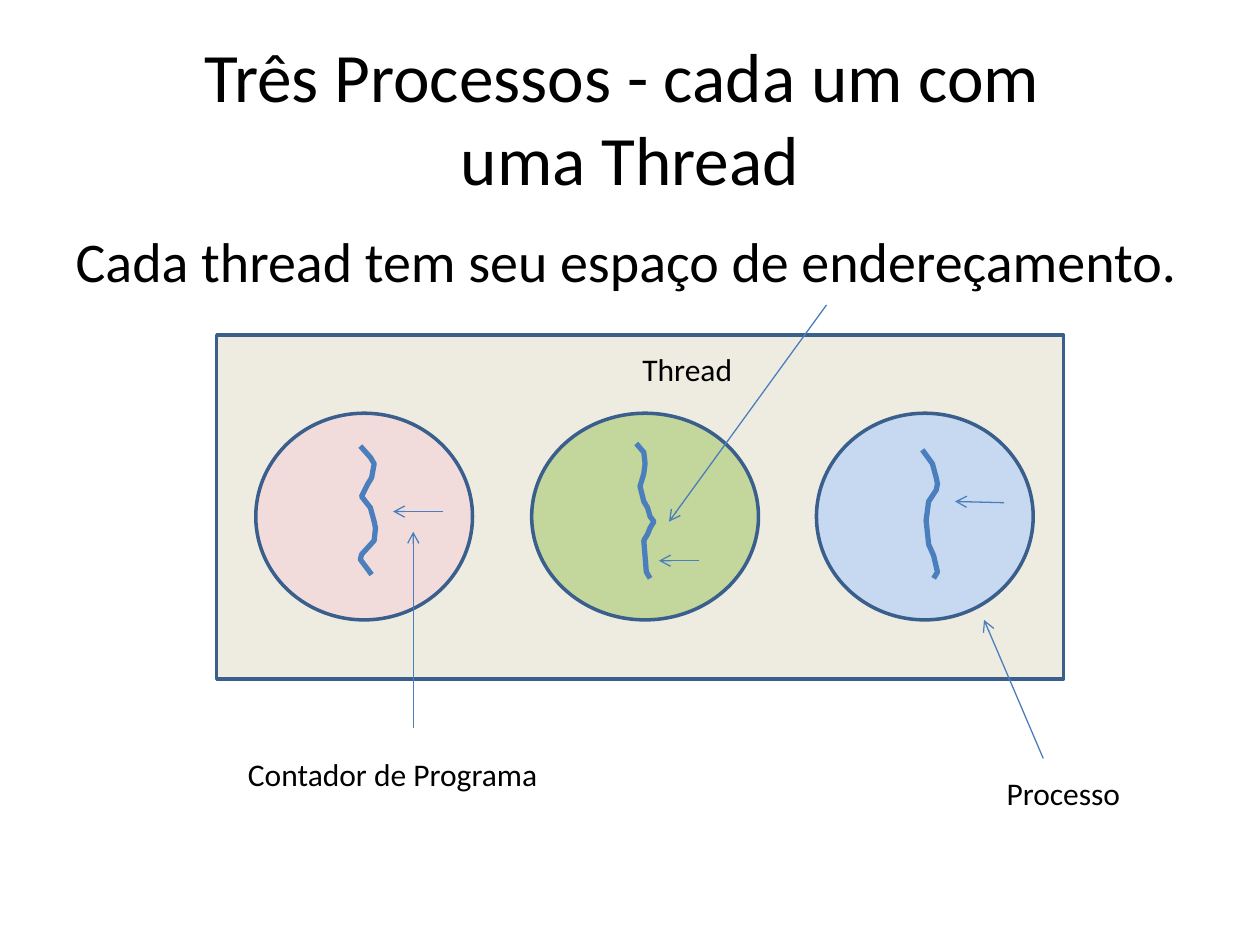
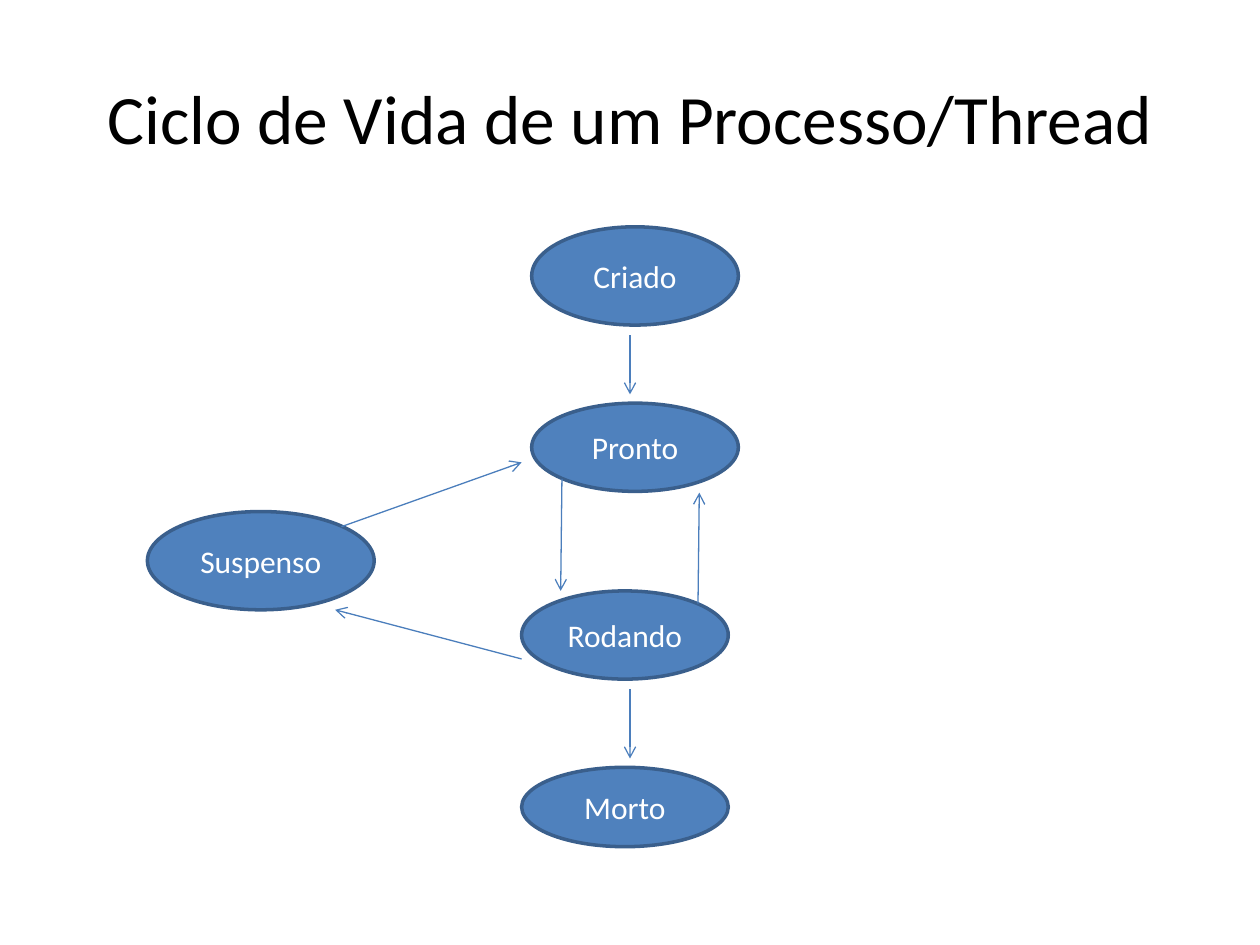
from dataclasses import dataclass

from lxml.etree import SubElement
from pptx import Presentation
from pptx.dml.color import RGBColor
from pptx.enum.shapes import MSO_CONNECTOR, MSO_SHAPE
from pptx.enum.text import MSO_ANCHOR, MSO_AUTO_SIZE, PP_ALIGN
from pptx.oxml.ns import qn
from pptx.util import Inches, Pt


@dataclass(frozen=True)
class Theme:
    font: str = "Calibri"
    ink: str = "000000"
    white: str = "FFFFFF"
    edge: str = "3A5F8C"
    wire: str = "4B7EBC"
    panel: str = "EEECE1"
    rose: str = "F2DCDB"
    green: str = "C3D69B"
    sky: str = "C6D9F1"
    state: str = "4F81BD"
    title: float = 39.6
    body: float = 32
    label: float = 18
    border: float = 2
    strand: float = 3
    arrow: float = 0.75


THEME = Theme()

PROCS = [
    (2.50, 1.80, THEME.green, (1.33, 1.17, 1.01, 1.17), [
        (0.83, 0.24), (0.89, 0.31), (0.90, 0.40), (0.89, 0.48), (0.86, 0.58),
        (0.89, 0.70), (0.92, 0.75), (0.94, 0.82), (0.97, 0.86), (0.94, 0.91),
        (0.92, 0.96), (0.89, 1.01), (0.91, 1.26), (0.94, 1.31),
    ]),
    (0.31, 1.72, THEME.rose, (1.49, 0.78, 1.09, 0.78), [
        (0.83, 0.26), (0.91, 0.35), (0.94, 0.40), (0.92, 0.51), (0.89, 0.56),
        (0.84, 0.66), (0.91, 0.75), (0.94, 0.86), (0.95, 0.91), (0.94, 1.01),
        (0.84, 1.12), (0.83, 1.16), (0.89, 1.24), (0.92, 1.28),
    ]),
    (4.76, 1.72, THEME.sky, (1.49, 0.71, 1.10, 0.70), [
        (0.84, 0.29), (0.92, 0.40), (0.95, 0.51), (0.96, 0.56), (0.95, 0.61),
        (0.89, 0.70), (0.87, 0.85), (0.89, 1.04), (0.93, 1.13), (0.96, 1.26),
        (0.93, 1.31),
    ]),
]

NOTES = [
    ("Contador de Programa", (0.15, 3.28, 2.73, 0.4), (1.56, 3.12, 1.56, 1.56)),
    ("Thread", (3.28, 0.07, 0.94, 0.4), (4.84, -0.24, 3.59, 1.48)),
    ("Processo", (6.17, 3.43, 1.25, 0.4), (6.56, 3.36, 6.09, 2.26)),
]

STATES = [
    ("Criado", (3.05, 0, 1.64, 0.78)),
    ("Pronto", (3.05, 1.4, 1.64, 0.7)),
    ("Rodando", (2.97, 2.89, 1.64, 0.7)),
    ("Morto", (2.97, 4.29, 1.64, 0.63)),
    ("Suspenso", (0, 2.26, 1.8, 0.78)),
]

MOVES = [
    (3.29, 2.0, 3.28, 2.89),
    (4.37, 2.99, 4.38, 2.11),
    (3.83, 0.86, 3.83, 1.33),
    (3.83, 3.67, 3.83, 4.22),
    (1.54, 2.38, 2.97, 1.87),
    (2.97, 3.43, 1.49, 3.04),
]


def apply(item, values):
    for name, value in values.items():
        setattr(item, name, value)


def rgb(code):
    return RGBColor.from_string(code)


def place(box, spot):
    left, top = box[:2]
    return [Inches(n) for n in (left + spot[0], top + spot[1], *spot[2:])]


def write(frame, text, size, color, align, **form):
    apply(frame, {"text": text, "word_wrap": True, **form})
    for para in frame.paragraphs:
        para.alignment = align
        for run in para.runs:
            apply(run.font, {"name": THEME.font, "size": Pt(size)})
            run.font.color.rgb = rgb(color)


def stroke(item, color, width):
    item.line.color.rgb = rgb(color)
    item.line.width = Pt(width)


def shape(slide, kind, box, spot, fill):
    item = slide.shapes.add_shape(kind, *place(box, spot))
    item.shadow.inherit = False
    item.fill.solid()
    item.fill.fore_color.rgb = rgb(fill)
    stroke(item, THEME.edge, THEME.border)
    return item


def arrow(slide, box, ends):
    ends = place(box, ends[:2]) + place(box, ends[2:])
    item = slide.shapes.add_connector(MSO_CONNECTOR.STRAIGHT, *ends)
    stroke(item, THEME.wire, THEME.arrow)
    props = item.element.spPr
    SubElement(props.find(qn("a:ln")), qn("a:tailEnd"), type="arrow")
    SubElement(props, qn("a:effectLst"))


def strand(slide, box, dots):
    start, *rest = [place(box, dot) for dot in dots]
    pen = slide.shapes.build_freeform(*start)
    pen.add_line_segments(rest, close=False)
    item = pen.convert_to_shape()
    item.shadow.inherit = False
    item.fill.background()
    stroke(item, THEME.wire, THEME.strand)


def head(slide, text):
    write(slide.shapes.title.text_frame, text, THEME.title, THEME.ink, PP_ALIGN.CENTER,
          vertical_anchor=MSO_ANCHOR.MIDDLE, auto_size=MSO_AUTO_SIZE.NONE)


def lead(slide, text):
    frame = slide.placeholders[1].text_frame
    write(frame, text, THEME.body, THEME.ink, PP_ALIGN.LEFT, auto_size=MSO_AUTO_SIZE.NONE)
    for para in frame.paragraphs:
        SubElement(para._p.get_or_add_pPr(), qn("a:buNone"))


def process(slide, box, fill, ends, dots):
    shape(slide, MSO_SHAPE.OVAL, box, (0, 0, *box[2:]), fill)
    strand(slide, box, dots)
    arrow(slide, box, ends)


def memory(slide, box):
    shape(slide, MSO_SHAPE.RECTANGLE, box, (0, 0, *box[2:]), THEME.panel)
    for left, width, *parts in PROCS:
        process(slide, (box[0] + left, box[1] + 0.62, width, 1.64), *parts)
    for text, spot, ends in NOTES:
        label = slide.shapes.add_textbox(*place(box, spot))
        write(label.text_frame, text, THEME.label, THEME.ink, PP_ALIGN.LEFT,
              auto_size=MSO_AUTO_SIZE.SHAPE_TO_FIT_TEXT)
        arrow(slide, box, ends)


def cycle(slide, box):
    for text, spot in STATES:
        item = shape(slide, MSO_SHAPE.OVAL, box, spot, THEME.state)
        write(item.text_frame, text, THEME.label, THEME.white, PP_ALIGN.CENTER,
              vertical_anchor=MSO_ANCHOR.MIDDLE)
    for ends in MOVES:
        arrow(slide, box, ends)


def main():
    deck = Presentation()
    apply(deck, {"slide_width": Inches(10), "slide_height": Inches(7.5)})
    slide = deck.slides.add_slide(deck.slide_layouts[1])
    head(slide, "Três Processos - cada um com \vuma Thread")
    lead(slide, "Cada thread tem seu espaço de endereçamento.")
    memory(slide, (1.72, 2.66, 6.72, 2.73))
    slide = deck.slides.add_slide(deck.slide_layouts[5])
    head(slide, "Ciclo de Vida de um Processo/Thread")
    cycle(slide, (1.17, 1.8))
    deck.save("out.pptx")


if __name__ == "__main__":
    main()
